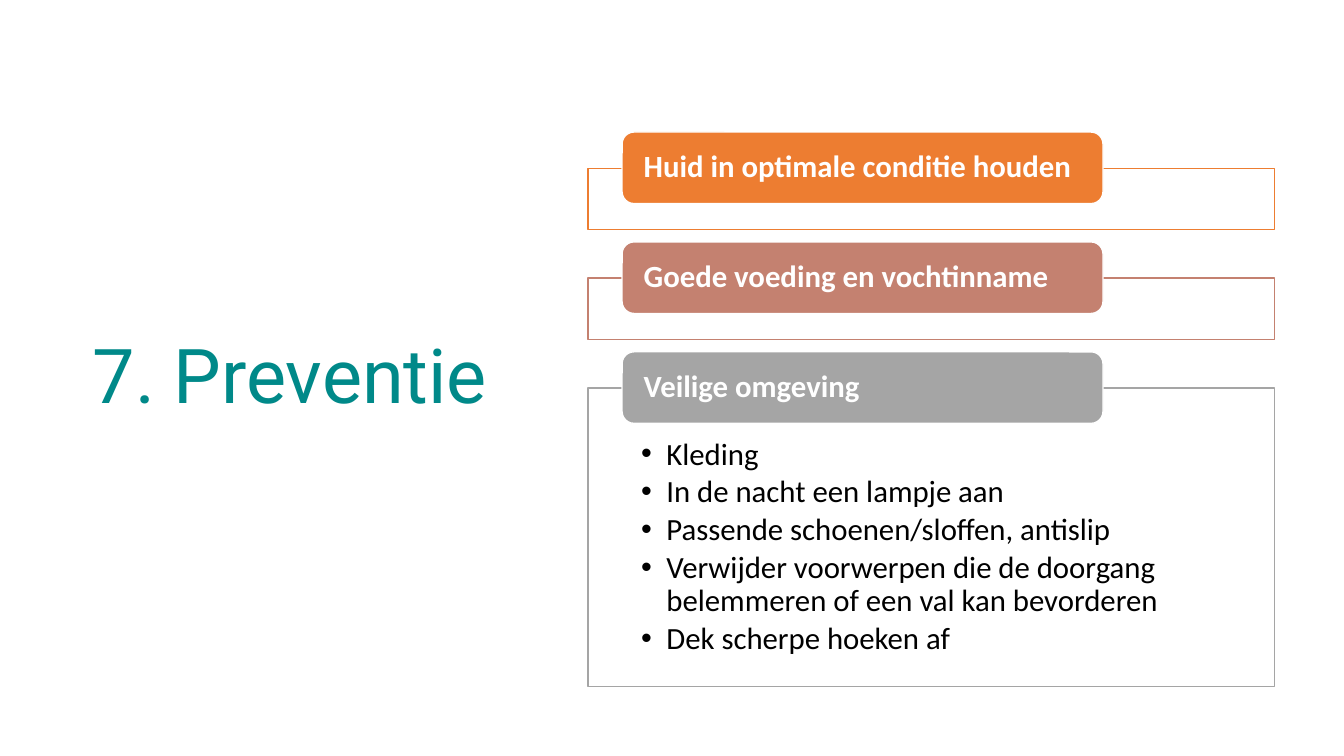
"""Build the prevention slide with three headed panels."""
from dataclasses import dataclass

from lxml.etree import SubElement
from pptx import Presentation
from pptx.dml.color import RGBColor
from pptx.enum.shapes import MSO_SHAPE
from pptx.enum.text import MSO_ANCHOR, PP_ALIGN
from pptx.oxml.ns import qn
from pptx.shapes.autoshape import Shape
from pptx.slide import Slide
from pptx.text.text import TextFrame, _Paragraph
from pptx.util import Pt

PX = 9144
WHITE = RGBColor(0xFF, 0xFF, 0xFF)
BLACK = RGBColor(0x00, 0x00, 0x00)
TEAL = RGBColor(0x00, 0x89, 0x89)
ORANGE = RGBColor(0xED, 0x7D, 0x31)
ROSE = RGBColor(0xC4, 0x81, 0x70)
GREY = RGBColor(0xA5, 0xA5, 0xA5)

PANEL_LEFT, PANEL_TOP, PANEL_WIDTH, PANEL_STEP = 583, 167, 681, 109
HEADER_LEFT, HEADER_WIDTH, HEADER_HEIGHT, HEADER_RISE = 617, 477, 71, 36
BULLET_INDENT = 25


@dataclass(frozen=True)
class Panel:
    """A headed panel with optional bullet points."""

    heading: str
    color: RGBColor
    height: int = 61
    points: tuple[str, ...] = ()


PANELS = (
    Panel("Huid in optimale conditie houden", ORANGE),
    Panel("Goede voeding en vochtinname", ROSE),
    Panel("Veilige omgeving", GREY, 296, (
        "Kleding",
        "In de nacht een lampje aan",
        "Passende schoenen/sloffen, antislip",
        "Verwijder voorwerpen die de doorgang belemmeren of een val kan bevorderen",
        "Dek scherpe hoeken af",
    )),
)


def set_frame(frame: TextFrame, anchor: MSO_ANCHOR, left: int, top: int,
              right: int, bottom: int) -> None:
    """Set wrapping, anchor and margins of a text frame."""
    frame.word_wrap = True
    frame.vertical_anchor = anchor
    frame.margin_left, frame.margin_top = left * PX, top * PX
    frame.margin_right, frame.margin_bottom = right * PX, bottom * PX


def add_text(paragraph: _Paragraph, text: str, font: str, size: int,
             color: RGBColor, bold: bool = False,
             align: PP_ALIGN = PP_ALIGN.LEFT) -> None:
    """Write one styled run in a paragraph."""
    paragraph.alignment = align
    paragraph.line_spacing = 0.9
    run = paragraph.add_run()
    run.text = text
    run.font.name = font
    run.font.size = Pt(size)
    run.font.bold = bold
    run.font.color.rgb = color


def add_box(slide: Slide, kind: MSO_SHAPE, left: int, top: int, width: int,
            height: int, fill: RGBColor, line: RGBColor) -> Shape:
    """Add a filled and outlined shape without shadow."""
    shape = slide.shapes.add_shape(kind, left * PX, top * PX, width * PX, height * PX)
    shape.shadow.inherit = False
    shape.fill.solid()
    shape.fill.fore_color.rgb = fill
    shape.line.color.rgb = line
    shape.line.width = Pt(1)
    return shape


def add_bullet(paragraph: _Paragraph) -> None:
    """Give a paragraph a hanging bullet."""
    properties = paragraph._p.get_or_add_pPr()
    properties.set("marL", str(BULLET_INDENT * PX))
    properties.set("indent", str(-BULLET_INDENT * PX))
    SubElement(properties, qn("a:buFont")).set("typeface", "Arial")
    SubElement(properties, qn("a:buChar")).set("char", "•")


def add_panel(slide: Slide, panel: Panel, top: int) -> None:
    """Draw a panel, its bullet points and its header."""
    body = add_box(slide, MSO_SHAPE.RECTANGLE, PANEL_LEFT, top, PANEL_WIDTH,
                   panel.height, WHITE, panel.color)
    fill_color = body._element.spPr.find(qn("a:solidFill"))[0]
    SubElement(fill_color, qn("a:alpha")).set("val", "90000")
    set_frame(body.text_frame, MSO_ANCHOR.TOP, 53, 50, 53, 17)
    for index, point in enumerate(panel.points):
        frame = body.text_frame
        paragraph = frame.add_paragraph() if index else frame.paragraphs[0]
        add_bullet(paragraph)
        paragraph.level = 1
        paragraph.space_after = Pt(3.3)
        add_text(paragraph, point, "Calibri", 22, BLACK)

    header = add_box(slide, MSO_SHAPE.ROUNDED_RECTANGLE, HEADER_LEFT, top - HEADER_RISE,
                     HEADER_WIDTH, HEADER_HEIGHT, panel.color, WHITE)
    set_frame(header.text_frame, MSO_ANCHOR.MIDDLE, 18, 0, 18, 0)
    add_text(header.text_frame.paragraphs[0], panel.heading, "Calibri", 22, WHITE, bold=True)


def add_title(slide: Slide) -> None:
    """Add the slide title on the left."""
    title = slide.shapes.add_textbox(69 * PX, 70 * PX, 437 * PX, 611 * PX)
    set_frame(title.text_frame, MSO_ANCHOR.MIDDLE, 10, 5, 10, 5)
    add_text(title.text_frame.paragraphs[0], "7. Preventie", "Roboto", 54, TEAL,
             align=PP_ALIGN.CENTER)


def main() -> None:
    """Build and save the presentation."""
    presentation = Presentation()
    presentation.slide_width, presentation.slide_height = 1333 * PX, 750 * PX
    slide = presentation.slides.add_slide(presentation.slide_layouts[6])
    add_title(slide)
    for index, panel in enumerate(PANELS):
        add_panel(slide, panel, PANEL_TOP + index * PANEL_STEP)
    presentation.save("out.pptx")


if __name__ == "__main__":
    main()
